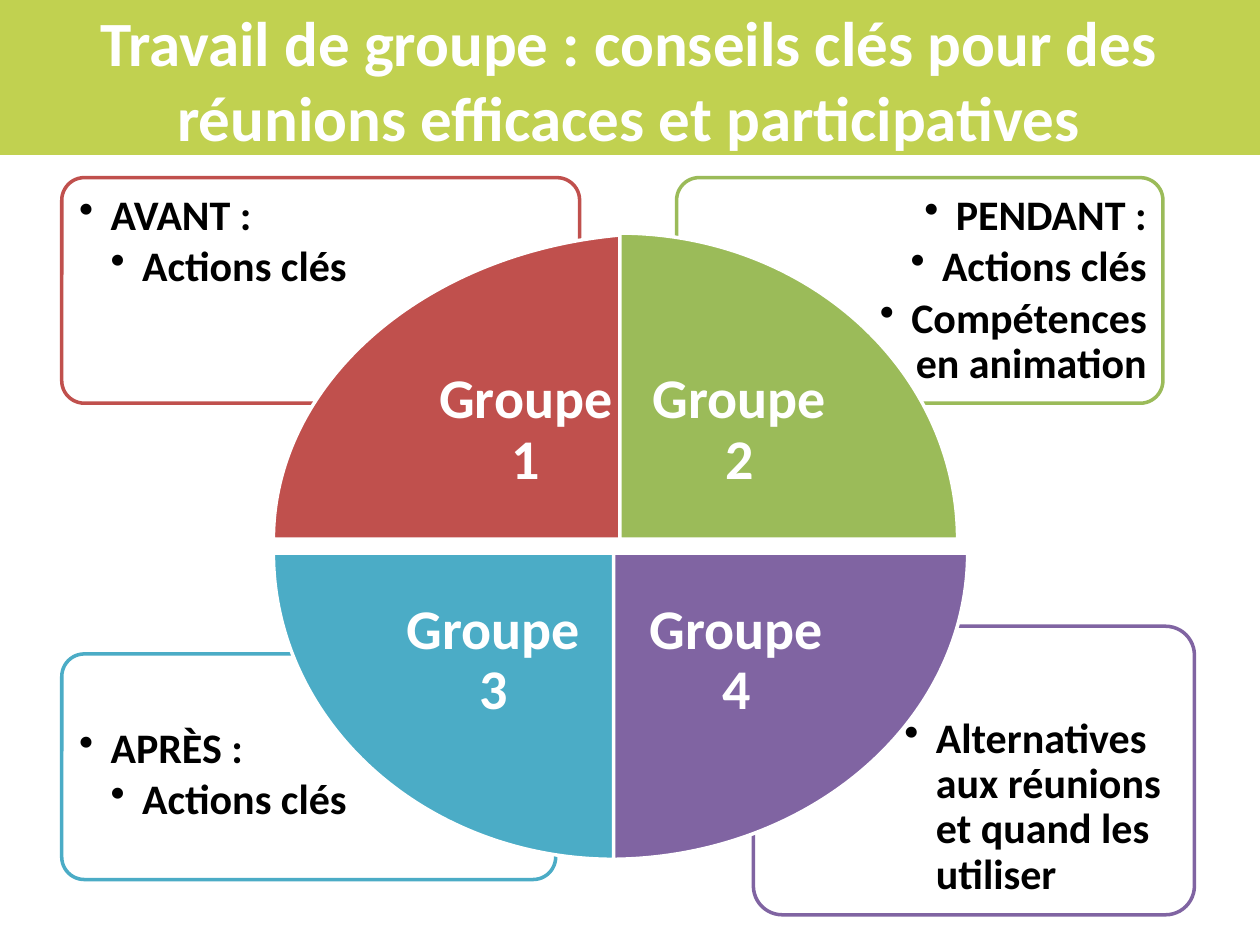
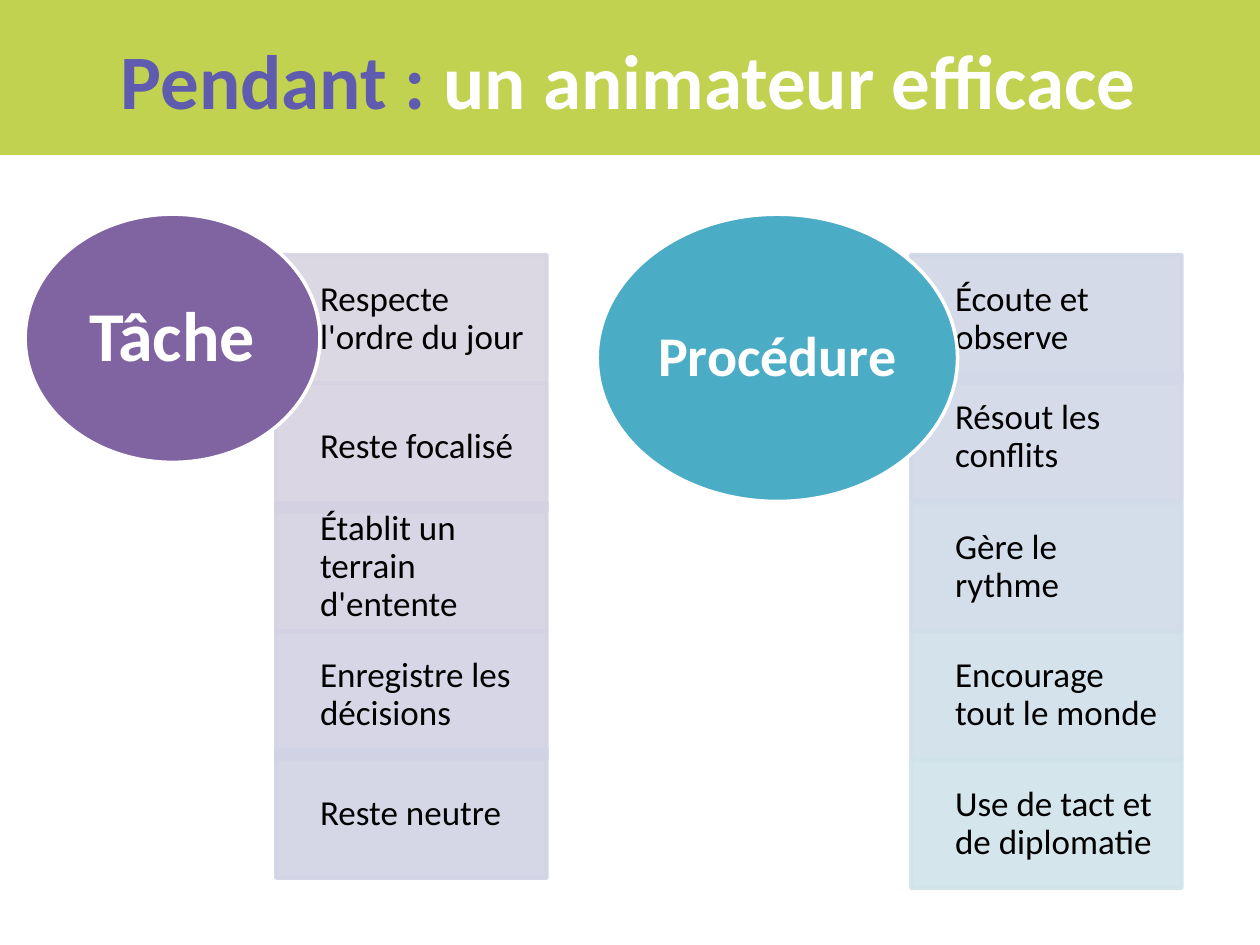
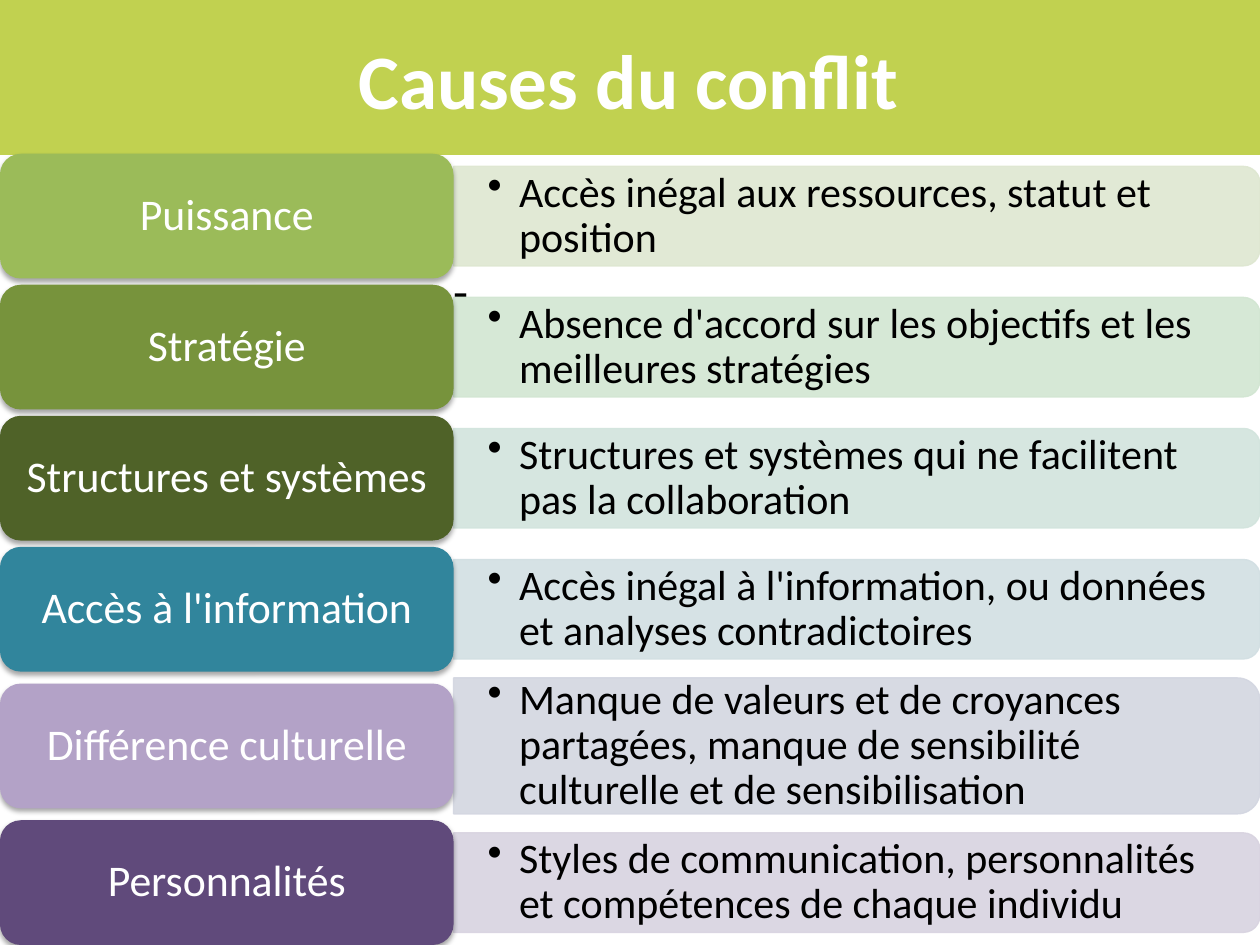
from dataclasses import dataclass
from typing import NamedTuple

from lxml.etree import SubElement
from pptx import Presentation
from pptx.dml.color import RGBColor
from pptx.enum.shapes import MSO_SHAPE as Kind
from pptx.enum.text import MSO_ANCHOR as Anchor, PP_ALIGN as Align
from pptx.oxml.ns import qn
from pptx.shapes.autoshape import Shape
from pptx.slide import Slide
from pptx.util import Inches, Pt


@dataclass(frozen=True)
class Theme:
    font: str = "Calibri"
    band: str = "C1D150"
    white: str = "FFFFFF"
    black: str = "000000"
    accent: str = "5F5BAE"
    red: str = "C0504D"
    green: str = "9BBB59"
    blue: str = "4BACC6"
    purple: str = "8064A2"
    olive: str = "77933C"
    moss: str = "4F6228"
    teal: str = "31859C"
    lilac: str = "B3A2C7"
    plum: str = "604A7B"
    title: int = 44
    small_title: int = 36
    big: int = 40
    wedge: int = 32
    dash: int = 28
    label: int = 25
    body: int = 24
    item: int = 20


T = Theme()


class Box(NamedTuple):
    left: float
    top: float
    width: float
    height: float

    def turn(self, angle: int) -> "Box":
        if angle % 180 == 0:
            return self
        shift = (self.width - self.height) / 2
        return Box(self.left + shift, self.top - shift, self.height, self.width)


class Run(NamedTuple):
    text: str
    color: str = T.black
    size: int = T.body
    bold: bool = False


class Para(NamedTuple):
    runs: list[Run]
    align: Align = Align.LEFT
    level: int = 0
    after: int = 35
    lines: float = 0.9


class Insets(NamedTuple):
    left: float
    top: float
    right: float
    bottom: float


class Card(NamedTuple):
    color: str
    frame: Box
    area: Box
    lines: list[tuple[int, str]]
    align: Align = Align.LEFT


class Wedge(NamedTuple):
    text: str
    color: str
    angle: int
    frame: Box
    area: Box


class Stack(NamedTuple):
    left: float
    head: str
    size: int
    color: str
    oval: Box
    area: Box
    items: list[tuple[float, str, str]]


class Cause(NamedTuple):
    name: str
    color: str
    tint: str
    text: str
    depth: float = 0.79


PLAIN = Insets(0.1, 0.05, 0.1, 0.05)


def even(size: float) -> Insets:
    return Insets(size, size, size, size)


def draw(slide: Slide, kind: Kind, box: Box, fill: str, line: str = "",
         width: float = 2, angle: int = 0, soft: bool = False) -> Shape:
    shape = slide.shapes.add_shape(kind, *map(Inches, box.turn(angle)))
    shape.rotation = angle
    shape.shadow.inherit = False
    shape.fill.solid()
    shape.fill.fore_color.rgb = RGBColor.from_string(fill)
    if line:
        shape.line.color.rgb = RGBColor.from_string(line)
        shape.line.width = Pt(width)
    else:
        shape.line.fill.background()
    if soft:
        for mark in shape._element.spPr.iter(qn("a:srgbClr")):
            if mark.get("val") == fill:
                SubElement(mark, qn("a:alpha"), val="90000")
    return shape


def cast_shadow(shape: Shape) -> None:
    effects = shape._element.spPr.find(qn("a:effectLst"))
    outer = SubElement(effects, qn("a:outerShdw"), blurRad=str(Pt(3.1)),
                       dist=str(Pt(1.8)), dir="5400000", rotWithShape="0")
    color = SubElement(outer, qn("a:srgbClr"), val=T.black)
    SubElement(color, qn("a:alpha"), val="35000")


def write(slide: Slide, box: Box, paras: list[Para], insets: Insets = PLAIN,
          anchor: Anchor = Anchor.MIDDLE, wrap: bool = True) -> None:
    frame = slide.shapes.add_textbox(*map(Inches, box)).text_frame
    frame.word_wrap = wrap
    frame.vertical_anchor = anchor
    frame.margin_left, frame.margin_top, frame.margin_right, frame.margin_bottom = map(Inches, insets)
    for index, item in enumerate(paras):
        para = frame.paragraphs[0] if index == 0 else frame.add_paragraph()
        para.alignment = item.align
        para.line_spacing = item.lines
        props = para._p.get_or_add_pPr()
        space = SubElement(props, qn("a:spcAft"))
        SubElement(space, qn("a:spcPct"), val=str(item.after * 1000))
        if item.level:
            para.level = item.level
            props.set("marL", str(Inches(0.25 * item.level)))
            props.set("indent", str(Inches(-0.25)))
            SubElement(props, qn("a:buChar"), char="•")
        for part in item.runs:
            run = para.add_run()
            run.text = part.text
            run.font.name = T.font
            run.font.size = Pt(part.size)
            run.font.bold = part.bold
            run.font.color.rgb = RGBColor.from_string(part.color)


def center(text: str, size: int, bold: bool = True) -> list[Para]:
    return [Para([Run(text, T.white, size, bold)], Align.CENTER)]


def bullet(text: str, level: int = 1, bold: bool = False, align: Align = Align.LEFT) -> Para:
    return Para([Run(text, bold=bold)], align, level, 15)


def add_band(slide: Slide) -> None:
    draw(slide, Kind.RECTANGLE, Box(0, 0, 10, 1.23), T.band)


def add_title(slide: Slide, parts: list[tuple[str, str]], size: int = T.title) -> None:
    runs = [Run(text, color, size, True) for text, color in parts]
    write(slide, Box(0.49, 0, 9, 1.25), [Para(runs, Align.CENTER, after=0, lines=1.0)])


CARDS = [
    Card(T.purple, Box(5.98, 4.97, 3.5, 2.29), Box(7.08, 5.59, 2.35, 1.62),
         [(1, "Alternatives aux réunions et quand les utiliser")]),
    Card(T.blue, Box(0.49, 5.19, 3.92, 1.79), Box(0.53, 5.67, 2.66, 1.27),
         [(1, "APRÈS :"), (2, "Actions clés")]),
    Card(T.green, Box(5.37, 1.41, 3.86, 1.79), Box(6.57, 1.44, 2.63, 1.27),
         [(1, "PENDANT :"), (2, "Actions clés"), (2, "Compétences en animation")], Align.RIGHT),
    Card(T.red, Box(0.49, 1.41, 4.11, 1.79), Box(0.53, 1.44, 2.8, 1.27),
         [(1, "AVANT :"), (2, "Actions clés")]),
]

WEDGES = [
    Wedge("Groupe 1", T.red, 0, Box(2.17, 1.85, 3.1, 2.43), Box(3.08, 2.56, 2.19, 1.72)),
    Wedge("Groupe 2", T.green, 90, Box(4.92, 1.85, 2.68, 2.43), Box(4.92, 2.56, 1.9, 1.72)),
    Wedge("Groupe 4", T.purple, 180, Box(4.84, 4.39, 2.84, 2.43), Box(4.84, 4.39, 2.01, 1.72)),
    Wedge("Groupe 3", T.blue, 270, Box(2.17, 4.39, 2.7, 2.43), Box(2.96, 4.39, 1.91, 1.72)),
]

STACKS = [
    Stack(2.19, "Tâche", T.big, T.purple, Box(0.2, 1.7, 2.34, 1.97), Box(0.54, 1.99, 1.65, 1.39), [
        (2.02, "D8D3E0", "Respecte l'ordre du jour"),
        (3.04, "D6D2E1", "Reste focalisé"),
        (3.99, "D4D2E2", "Établit un terrain d'entente"),
        (5.01, "D2D2E4", "Enregistre les décisions"),
        (5.95, "D1D3E5", "Reste neutre"),
    ]),
    Stack(7.23, "Procédure", T.wedge, T.blue, Box(4.74, 1.7, 2.86, 2.28), Box(5.16, 2.04, 2.02, 1.61), [
        (2.02, "D1D6E6", "Écoute et observe"),
        (2.96, "D1D8E7", "Résout les conflits"),
        (3.99, "D0DBE8", "Gère le rythme"),
        (5.01, "D0DFE9", "Encourage tout le monde"),
        (6.03, "D0E3EA", "Use de tact et de diplomatie"),
    ]),
]

CAUSES = [
    Cause("Puissance", T.green, "DEE7D1", "Accès inégal aux ressources, statut et position"),
    Cause("Stratégie", T.olive, "D2E6D2",
          "Absence d'accord sur les objectifs et les meilleures stratégies"),
    Cause("Structures et systèmes", T.moss, "D2E4DD",
          "Structures et systèmes qui ne facilitent pas la collaboration"),
    Cause("Accès à l'information", T.teal, "D2DFE3",
          "Accès inégal à l'information, ou données et analyses contradictoires"),
    Cause("Différence culturelle", T.lilac, "D3D6E1",
          "Manque de valeurs et de croyances partagées, manque de sensibilité "
          "culturelle et de sensibilisation", 1.08),
    Cause("Personnalités", T.plum, "D8D3E0",
          "Styles de communication, personnalités et compétences de chaque individu"),
]


def build_groups(slide: Slide) -> None:
    add_title(slide, [("Travail de groupe : conseils clés pour des réunions efficaces et participatives",
                       T.white)], T.small_title)
    for card in CARDS:
        shape = draw(slide, Kind.ROUNDED_RECTANGLE, card.frame, T.white, card.color, soft=True)
        shape.adjustments[0] = 0.1
        write(slide, card.area, [bullet(text, level, True, card.align) for level, text in card.lines],
              even(0.1), Anchor.TOP)
    for wedge in WEDGES:
        draw(slide, Kind.PIE_WEDGE, wedge.frame, wedge.color, T.white, angle=wedge.angle)
        write(slide, wedge.area, center(wedge.text, T.wedge), even(0.25))


def build_leader(slide: Slide) -> None:
    add_title(slide, [("Pendant : ", T.accent), ("un animateur efficace", T.white)])
    for stack in STACKS:
        for top, tint, text in stack.items:
            draw(slide, Kind.RECTANGLE, Box(stack.left, top, 2.15, 1.02), tint, tint, soft=True)
            write(slide, Box(stack.left + 0.35, top, 1.81, 1.02),
                  [Para([Run(text, size=T.item)])], Insets(0, 0.16, 0.16, 0.16))
        draw(slide, Kind.OVAL, stack.oval, stack.color, T.white)
        write(slide, stack.area, center(stack.head, stack.size), even(0))


def build_causes(slide: Slide) -> None:
    write(slide, Box(3.5, 2.02, 0.32, 0.57), [Para([Run("-", size=T.dash)], after=0, lines=1.0)],
          anchor=Anchor.TOP, wrap=False)
    add_title(slide, [("Causes du conflit", T.white)])
    split, tall, gap, top = 3.6, 0.99, 0.05, 1.22
    for cause in CAUSES:
        row = max(tall, cause.depth)
        mid = top + row / 2
        bar = Box(split, mid - cause.depth / 2, 10 - split, cause.depth)
        draw(slide, Kind.ROUND_2_SAME_RECTANGLE, bar, cause.tint, cause.tint, 0.75, 90, True)
        high = cause.depth - 0.08
        write(slide, Box(split, mid - high / 2, 6.36, high), [bullet(cause.text)],
              Insets(0.27, 0.14, 0.27, 0.14))
        cast_shadow(draw(slide, Kind.ROUNDED_RECTANGLE, Box(0, mid - tall / 2, split, tall), cause.color))
        write(slide, Box(0.05, mid - 0.45, split - 0.1, 0.9), center(cause.name, T.label, False))
        top += row + gap


def main() -> None:
    deck = Presentation()
    deck.slide_width, deck.slide_height = Inches(10), Inches(7.5)
    for build in (build_groups, build_leader, build_causes):
        slide = deck.slides.add_slide(deck.slide_layouts[6])
        add_band(slide)
        build(slide)
    deck.save("out.pptx")


if __name__ == "__main__":
    main()
